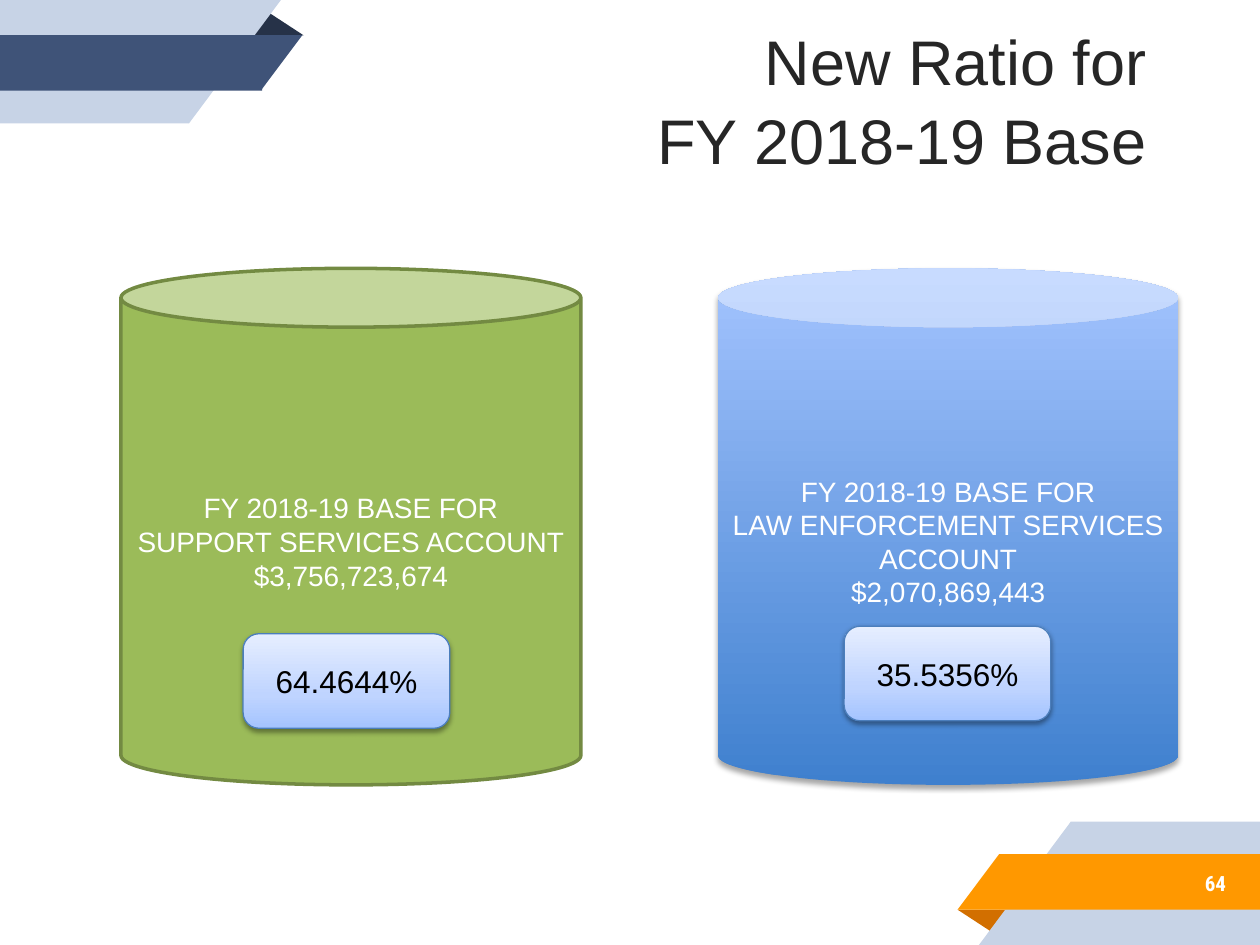
from dataclasses import dataclass
from typing import Optional

from lxml.etree import SubElement
from pptx import Presentation
from pptx.dml.color import RGBColor
from pptx.enum.shapes import MSO_SHAPE
from pptx.enum.text import MSO_ANCHOR, MSO_AUTO_SIZE, PP_ALIGN
from pptx.oxml.ns import qn
from pptx.util import Inches, Pt

WHITE = RGBColor(0xFF, 0xFF, 0xFF)
BLACK = RGBColor(0, 0, 0)
INK = RGBColor(0x26, 0x26, 0x26)
PALE = RGBColor(0xC7, 0xD3, 0xE6)
NAVY = RGBColor(0x3F, 0x53, 0x78)
DARK_NAVY = RGBColor(0x26, 0x32, 0x48)
ORANGE = RGBColor(0xFF, 0x98, 0x00)
DARK_ORANGE = RGBColor(0xD2, 0x6F, 0x00)
GREEN = RGBColor(0x9B, 0xBB, 0x59)
DARK_GREEN = RGBColor(0x73, 0x8A, 0x42)
BLUE = RGBColor(0x3F, 0x80, 0xCE)
SKY = RGBColor(0xA4, 0xC4, 0xFF)
LIGHT_SKY = RGBColor(0xBF, 0xD4, 0xFF)
ICE = RGBColor(0xE6, 0xEE, 0xFF)
BADGE_LINE = RGBColor(0x4B, 0x7E, 0xBC)

CAN_GRADIENT = ((0, BLUE), (100, SKY))
BADGE_GRADIENT = ((0, SKY), (35, LIGHT_SKY), (100, ICE))


@dataclass
class Piece:
    kind: MSO_SHAPE
    box: tuple
    color: RGBColor
    flip: Optional[str] = None
    rotation: int = 0


@dataclass
class Account:
    left: float
    text: str
    badge_at: tuple
    share: str
    fill: Optional[RGBColor] = None


RECT, CORNER, FOLD = MSO_SHAPE.RECTANGLE, MSO_SHAPE.RIGHT_TRIANGLE, MSO_SHAPE.ISOSCELES_TRIANGLE
PIECES = [
    Piece(FOLD, (7.6, 7.22, 0.43, 0.19), DARK_ORANGE, rotation=180),
    Piece(RECT, (8.5, 6.52, 1.5, 0.98), PALE),
    Piece(CORNER, (7.77, 6.52, 0.73, 0.98), PALE, "flipH"),
    Piece(RECT, (7.93, 6.78, 2.07, 0.44), ORANGE),
    Piece(CORNER, (7.6, 6.78, 0.33, 0.44), ORANGE, "flipH"),
    Piece(FOLD, (1.98, 0.09, 0.43, 0.19), DARK_NAVY),
    Piece(RECT, (0, 0, 1.5, 0.98), PALE),
    Piece(CORNER, (1.5, 0, 0.73, 0.98), PALE, "flipV"),
    Piece(RECT, (0, 0.28, 2.08, 0.44), NAVY),
    Piece(CORNER, (2.07, 0.28, 0.33, 0.44), NAVY, "flipV"),
]
ACCOUNTS = [
    Account(0.96, "FY 2018-19 BASE FOR\nSUPPORT SERVICES ACCOUNT\n$3,756,723,674",
            (1.93, 5.03), "64.4644%", GREEN),
    Account(5.7, "FY 2018-19 BASE FOR\nLAW ENFORCEMENT SERVICES ACCOUNT\n$2,070,869,443",
            (6.7, 4.97), "35.5356%"),
]


def add_shape(s, kind: MSO_SHAPE, box: tuple):
    sp = s.shapes.add_shape(kind, *map(Inches, box))
    sp.shadow.inherit = False
    sp.line.fill.background()
    return sp


def set_fill(sp, color: RGBColor) -> None:
    sp.fill.solid()
    sp.fill.fore_color.rgb = color


def set_line(sp, color: RGBColor, width: float) -> None:
    sp.line.color.rgb = color
    sp.line.width = Pt(width)


def set_gradient(sp, stops: tuple) -> None:
    sp.fill.gradient()
    sp.fill.gradient_angle = 90
    gs_list = sp._element.spPr.find(qn("a:gradFill")).find(qn("a:gsLst"))
    for old in list(gs_list):
        gs_list.remove(old)
    for position, color in stops:
        gs = SubElement(gs_list, qn("a:gs"), pos=str(position * 1000))
        SubElement(gs, qn("a:srgbClr"), val=str(color))


def set_shadow(sp, opacity: int, distance: float) -> None:
    effects = sp._element.spPr.find(qn("a:effectLst"))
    shadow = SubElement(effects, qn("a:outerShdw"), blurRad=str(Pt(3.1)),
                        dist=str(Pt(distance)), dir="5400000", rotWithShape="0")
    color = SubElement(shadow, qn("a:srgbClr"), val=str(BLACK))
    SubElement(color, qn("a:alpha"), val=str(opacity * 1000))


def set_text(sp, text: str, size: int, color: RGBColor, align: PP_ALIGN = PP_ALIGN.CENTER,
             font: str = "Arial", bold: bool = False) -> None:
    tf = sp.text_frame
    tf.text = text
    tf.word_wrap = True
    tf.auto_size = MSO_AUTO_SIZE.NONE
    tf.vertical_anchor = MSO_ANCHOR.MIDDLE
    for p in tf.paragraphs:
        p.alignment = align
        for r in p.runs:
            r.font.name, r.font.size, r.font.bold = font, Pt(size), bold
            r.font.color.rgb = color


def draw_piece(s, piece: Piece) -> None:
    sp = add_shape(s, piece.kind, piece.box)
    set_fill(sp, piece.color)
    sp.rotation = piece.rotation
    if piece.kind == FOLD:
        sp.adjustments[0] = 0.324
    if piece.flip:
        sp._element.spPr.xfrm.set(piece.flip, "1")


def draw_can(s, account: Account) -> None:
    sp = add_shape(s, MSO_SHAPE.CAN, (account.left, 2.13, 3.65, 4.1))
    sp.adjustments[0] = 0.128
    if account.fill:
        set_fill(sp, account.fill)
        set_line(sp, DARK_GREEN, 2)
    else:
        set_gradient(sp, CAN_GRADIENT)
        set_shadow(sp, 35, 1.8)
    set_text(sp, account.text, 16, WHITE)


def draw_badge(s, account: Account) -> None:
    sp = add_shape(s, MSO_SHAPE.ROUNDED_RECTANGLE, (*account.badge_at, 1.64, 0.75))
    set_gradient(sp, BADGE_GRADIENT)
    set_line(sp, BADGE_LINE, 0.75)
    set_shadow(sp, 38, 1.6)
    set_text(sp, account.share, 18, BLACK)


def main() -> None:
    prs = Presentation()
    prs.slide_width, prs.slide_height = Inches(10), Inches(7.5)
    s = prs.slides.add_slide(prs.slide_layouts[5])

    for piece in PIECES:
        draw_piece(s, piece)

    number = s.shapes.add_textbox(Inches(8.2), Inches(6.78), Inches(1.63), Inches(0.46))
    set_text(number, "64", 12, WHITE, PP_ALIGN.RIGHT, "Roboto Condensed", True)
    number.text_frame.margin_top = number.text_frame.margin_bottom = Inches(0.1)

    title = s.shapes.title
    title.left, title.top = Inches(0.47), Inches(0.32)
    title.width, title.height = Inches(8.73), Inches(0.92)
    set_text(title, "New Ratio for\nFY 2018-19 Base", 36, INK, PP_ALIGN.RIGHT)
    for p in title.text_frame.paragraphs:
        p.line_spacing = 1.04

    for account in ACCOUNTS:
        draw_can(s, account)
    for account in ACCOUNTS:
        draw_badge(s, account)

    prs.save("out.pptx")


if __name__ == "__main__":
    main()
